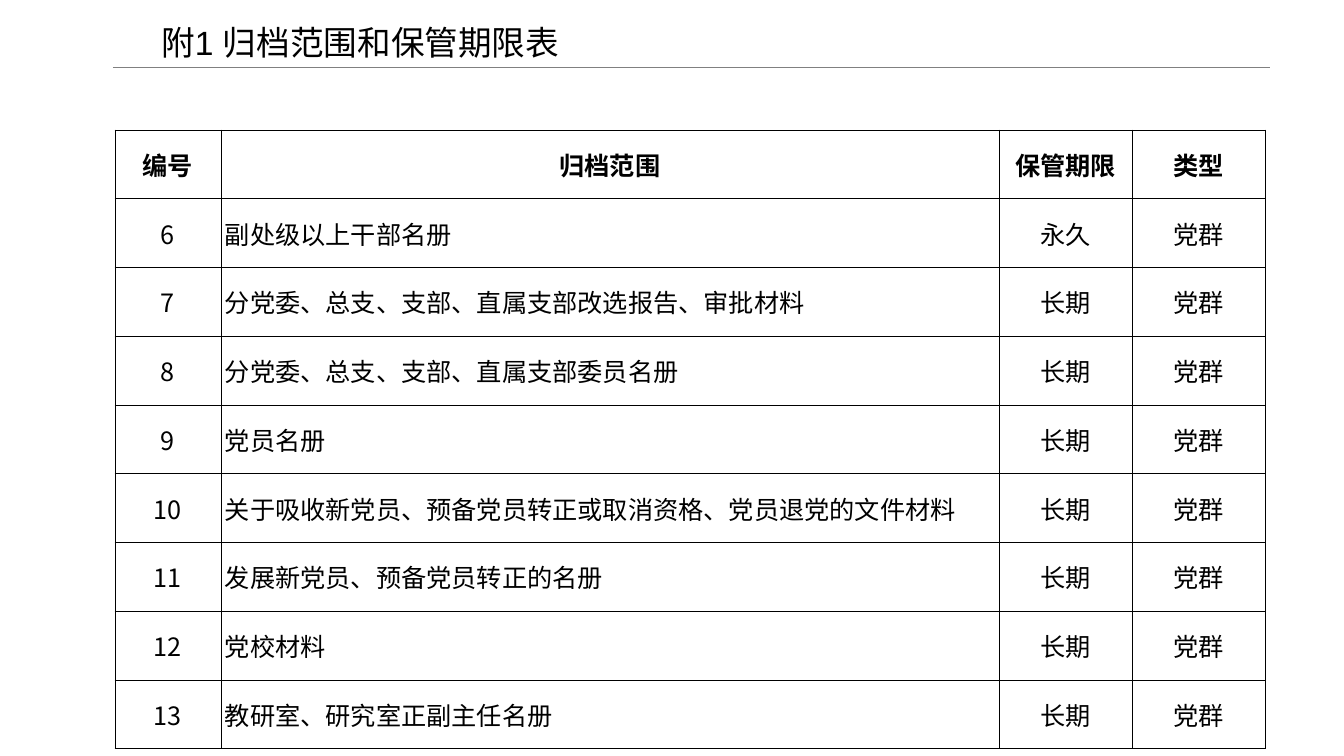
import pptx
import pptx.util
import pptx.dml.color
import pptx.enum.shapes
import pptx.enum.text
import pptx.oxml.ns
import lxml.etree

Inches, Pt = pptx.util.Inches, pptx.util.Pt
ALIGN = pptx.enum.text.PP_ALIGN
MIDDLE = pptx.enum.text.MSO_ANCHOR.MIDDLE
COLORS = {"text": "000000", "rule": "808080", "border": "000000", "cell": "FFFFFF"}
CJK = "Noto Sans CJK SC"


def rgb(name):
    return pptx.dml.color.RGBColor.from_string(COLORS[name])


def add_xml(parent, tag, **attrs):
    return lxml.etree.SubElement(parent, pptx.oxml.ns.qn(tag), **attrs)


class ArchiveSlide:
    def __init__(self, prs):
        self.s = prs.slides.add_slide(prs.slide_layouts[5])

    def style(self, p, size, font, align, bold=False):
        p.alignment = align
        for r in p.runs:
            r.font.size, r.font.name, r.font.bold = Pt(size), font, bold
            r.font.color.rgb = rgb("text")
            add_xml(r.font._element, "a:ea", typeface=CJK)

    def title(self, text, x, y, w, h):
        sp = self.s.shapes.title
        sp.left, sp.top, sp.width, sp.height = map(Inches, (x, y, w, h))
        tf = sp.text_frame
        tf.text = text
        tf.word_wrap, tf.vertical_anchor = True, MIDDLE
        tf.auto_size = pptx.enum.text.MSO_AUTO_SIZE.NONE
        p = tf.paragraphs[0]
        p.line_spacing = 0.9
        self.style(p, 24, "Arial", ALIGN.LEFT)

    def rule(self, x1, x2, y):
        line = self.s.shapes.add_connector(
            pptx.enum.shapes.MSO_CONNECTOR.STRAIGHT,
            Inches(x1), Inches(y), Inches(x2), Inches(y))
        line.line.color.rgb = rgb("rule")
        line.line.width = Pt(0.75)
        add_xml(line._element.spPr, "a:effectLst")

    def cell(self, cell, text, align, pad_x, pad_y, bold):
        cell.text = text
        cell.vertical_anchor = MIDDLE
        cell.margin_left = cell.margin_right = Inches(pad_x)
        cell.margin_top = cell.margin_bottom = Inches(pad_y)
        self.style(cell.text_frame.paragraphs[0], 18, CJK, align, bold)
        # Borders come before the fill in the cell properties
        tcPr = cell._tc.get_or_add_tcPr()
        for side in ("a:lnL", "a:lnR", "a:lnT", "a:lnB"):
            ln = add_xml(tcPr, side, w=str(Pt(0.5)))
            add_xml(add_xml(ln, "a:solidFill"), "a:srgbClr", val=COLORS["border"])
        cell.fill.solid()
        cell.fill.fore_color.rgb = rgb("cell")

    def table(self, rows, x, y, widths, header_h, row_h):
        height = header_h + row_h * (len(rows) - 1)
        table = self.s.shapes.add_table(
            len(rows), len(widths), Inches(x), Inches(y),
            Inches(sum(widths)), Inches(height)).table
        for col, w in zip(table.columns, widths):
            col.width = Inches(w)
        for i, values in enumerate(rows):
            header = i == 0
            table.rows[i].height = Inches(header_h if header else row_h)
            for j, text in enumerate(values):
                if header:
                    align, pad_x, pad_y = ALIGN.CENTER, 0, 0.16
                elif j == 1:
                    align, pad_x, pad_y = ALIGN.LEFT, 0.04, 0.12
                else:
                    align, pad_x, pad_y = ALIGN.CENTER, 0.01, 0.16
                self.cell(table.cell(i, j), text, align, pad_x, pad_y, header)


def main():
    prs = pptx.Presentation()
    prs.slide_width, prs.slide_height = Inches(13.33), Inches(7.5)
    slide = ArchiveSlide(prs)

    # Title and the rule under it
    slide.title("附1 归档范围和保管期限表", 1.5, 0.14, 11.06, 0.6)
    slide.rule(1.12, 12.6, 0.67)

    # Filing scope: only the first item is kept permanently
    scopes = [
        "副处级以上干部名册",
        "分党委、总支、支部、直属支部改选报告、审批材料",
        "分党委、总支、支部、直属支部委员名册",
        "党员名册",
        "关于吸收新党员、预备党员转正或取消资格、党员退党的文件材料",
        "发展新党员、预备党员转正的名册",
        "党校材料",
        "教研室、研究室正副主任名册",
    ]
    rows = [("编号", "归档范围", "保管期限", "类型")]
    for number, scope in enumerate(scopes, start=6):
        rows.append((str(number), scope, "永久" if number == 6 else "长期", "党群"))
    slide.table(rows, 1.14, 1.29, (1.05, 7.72, 1.32, 1.32), 0.63, 0.49)

    prs.save("out.pptx")


if __name__ == "__main__":
    main()
